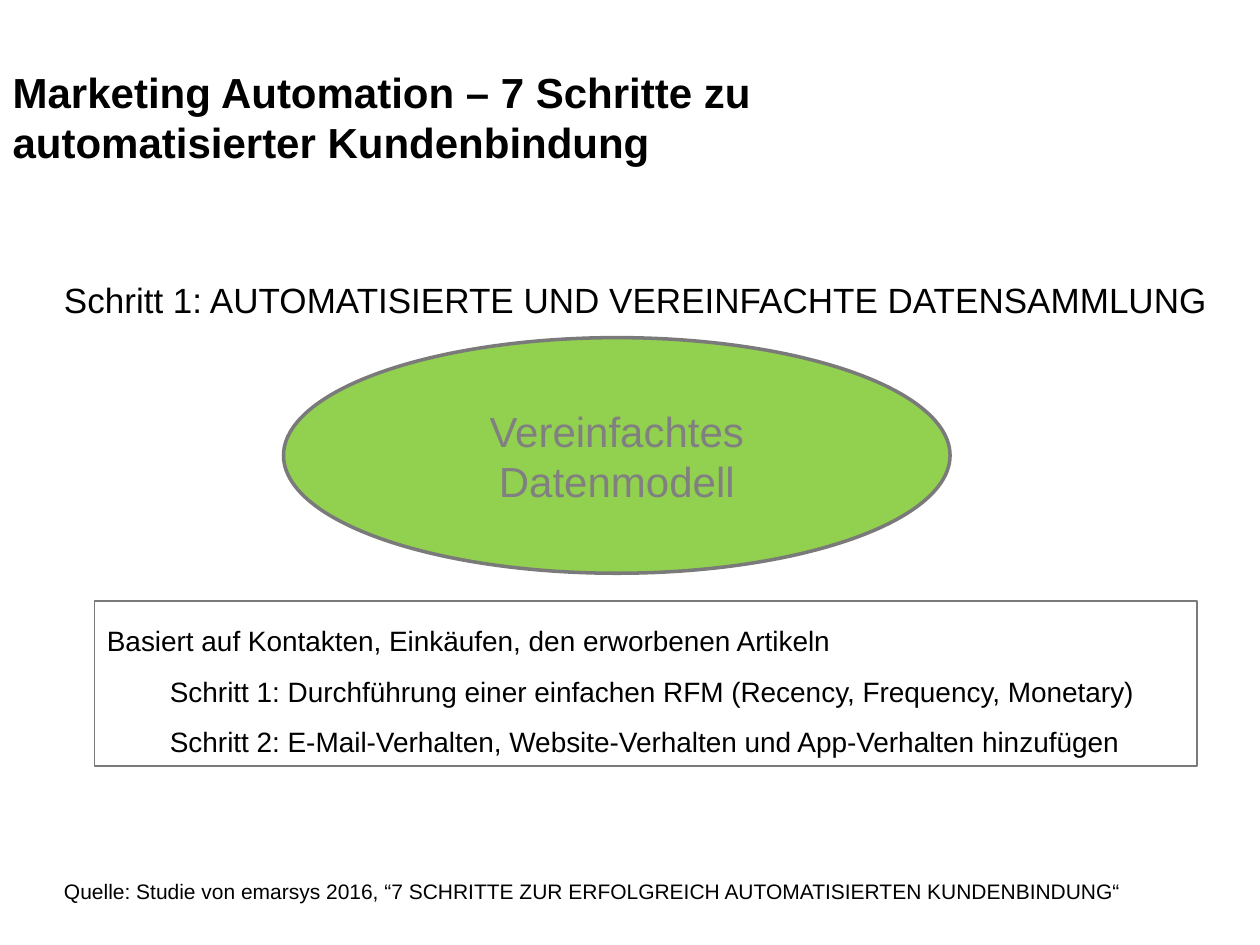
from pptx import Presentation
from pptx import util as u
from pptx.dml.color import RGBColor
from pptx.enum import shapes, text


def color(value):
    """Turn a hex string into a colour."""
    return RGBColor.from_string(value)


class Page:
    """Holds the style and the current slide."""

    font = "Arial"
    ink = "000000"
    gray = "808080"
    edge = "7A7A7A"
    green = "92D050"

    def __init__(self, deck):
        """Add a title-only slide to the deck."""
        self.slide = deck.slides.add_slide(deck.slide_layouts[5])

    def set_text(self, shape, lines, size, ink=None, bold=False, spacing=None,
                 align=text.PP_ALIGN.LEFT, anchor=text.MSO_ANCHOR.TOP, wrap=True, grow=True):
        """Fill a shape with (level, wording) lines."""
        frame = shape.text_frame
        frame.text = "\n".join(wording for level, wording in lines)
        frame.word_wrap = wrap
        frame.vertical_anchor = anchor
        frame.auto_size = (text.MSO_AUTO_SIZE.SHAPE_TO_FIT_TEXT if grow
                           else text.MSO_AUTO_SIZE.NONE)
        for para, (level, wording) in zip(frame.paragraphs, lines):
            para.level = level
            para.alignment = align
            if spacing:
                para.line_spacing = spacing
            for span in para.runs:
                span.font.name = self.font
                span.font.size = u.Pt(size)
                span.font.bold = bold
                span.font.color.rgb = color(ink or self.ink)

    def title(self, place, wording, size):
        """Move and format the title placeholder."""
        box = self.slide.shapes.title
        box.left, box.top, box.width, box.height = map(u.Inches, place)
        self.set_text(box, [(0, wording)], size, bold=True, anchor=text.MSO_ANCHOR.MIDDLE)

    def label(self, place, wording, size, **style):
        """Add a text box."""
        box = self.slide.shapes.add_textbox(*map(u.Inches, place))
        self.set_text(box, [(0, wording)], size, **style)

    def outline(self, kind, place, lines, size, weight, fill=None, **style):
        """Add an outlined preset shape with text."""
        shape = self.slide.shapes.add_shape(kind, *map(u.Inches, place))
        shape.shadow.inherit = False
        if fill:
            shape.fill.solid()
            shape.fill.fore_color.rgb = color(fill)
        else:
            shape.fill.background()
        shape.line.color.rgb = color(self.edge)
        shape.line.width = u.Pt(weight)
        self.set_text(shape, lines, size, **style)


def main():
    """Build and save the slide."""
    deck = Presentation()
    deck.slide_width, deck.slide_height = u.Inches(10), u.Inches(7.5)
    page = Page(deck)
    page.title((0, 0.47, 6.73, 0.91),
               "Marketing Automation – 7 Schritte zu automatisierter Kundenbindung", 24)
    page.label((0.41, 1.83, 9.33, 0.67),
               "Schritt 1: AUTOMATISIERTE UND VEREINFACHTE DATENSAMMLUNG", 20, spacing=2.0)
    page.label((0.41, 6.92, 8.67, 0.3),
               "Quelle: Studie von emarsys 2016, “7 SCHRITTE ZUR ERFOLGREICH "
               "AUTOMATISIERTEN KUNDENBINDUNG“", 12, wrap=False)
    page.outline(shapes.MSO_SHAPE.OVAL, (2.25, 2.68, 5.29, 1.87),
                 [(0, "Vereinfachtes Datenmodell")], 24, 2, fill=page.green, ink=page.gray,
                 align=text.PP_ALIGN.CENTER, anchor=text.MSO_ANCHOR.MIDDLE, grow=False)
    page.outline(shapes.MSO_SHAPE.RECTANGLE, (0.75, 4.77, 8.75, 1.31), [
        (0, "Basiert auf Kontakten, Einkäufen, den erworbenen Artikeln"),
        (1, "Schritt 1: Durchführung einer einfachen RFM (Recency, Frequency, Monetary)"),
        (1, "Schritt 2: E-Mail-Verhalten, Website-Verhalten und App-Verhalten hinzufügen"),
    ], 16, 0.75, spacing=1.5)
    deck.save("out.pptx")


if __name__ == "__main__":
    main()
